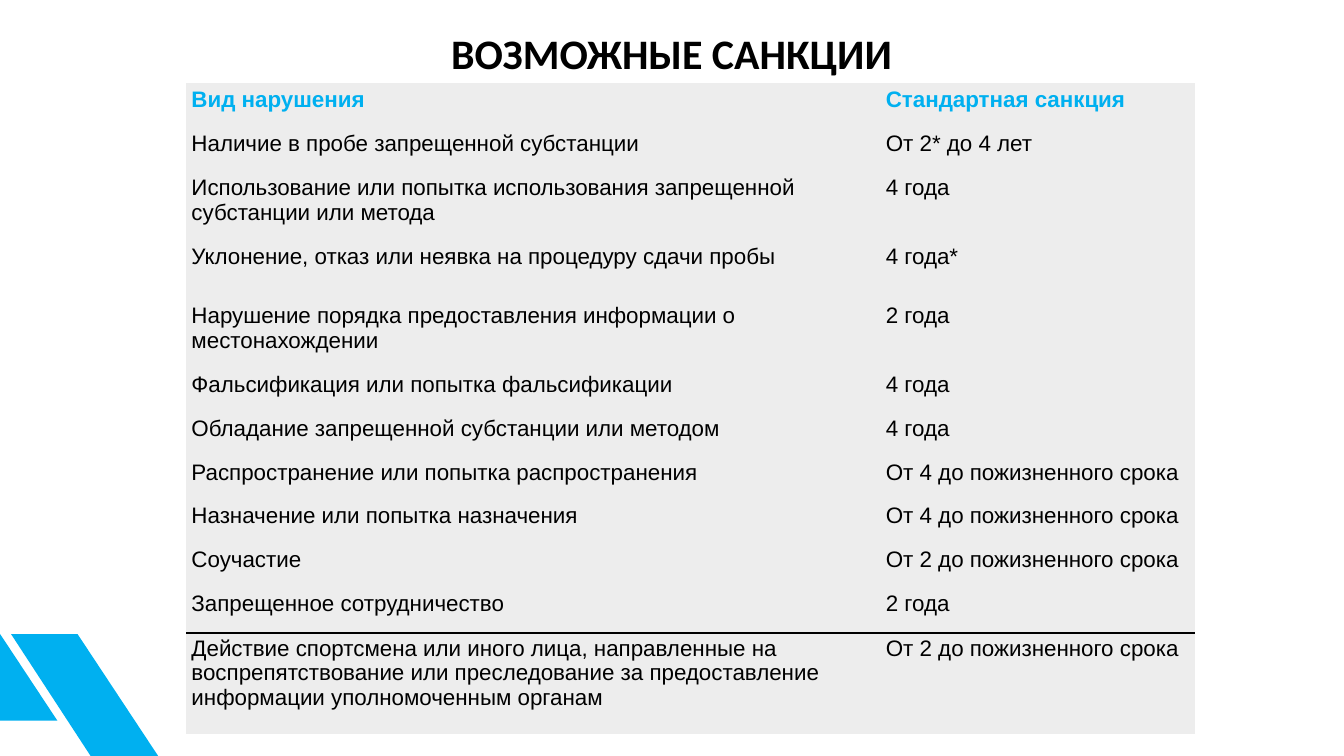
"""Build the slide listing anti-doping violations and their sanctions."""
from dataclasses import dataclass

from lxml.etree import SubElement
from pptx import Presentation
from pptx.dml.color import RGBColor
from pptx.enum.shapes import MSO_CONNECTOR
from pptx.enum.text import PP_ALIGN
from pptx.oxml.ns import qn
from pptx.util import Pt

EMU_PER_PX = 4572


@dataclass(frozen=True)
class Theme:
    accent: RGBColor = RGBColor(0x00, 0xB0, 0xF0)
    ink: RGBColor = RGBColor(0x00, 0x00, 0x00)
    panel: RGBColor = RGBColor(0xED, 0xED, 0xED)
    title_font: str = "Calibri"
    body_font: str = "Arial"
    title_size: int = 30
    body_size: int = 16
    paragraph_gap: int = 14
    rule_width: float = 1.5


THEME = Theme()
INSET = 10
COLUMN_WIDTHS = (1378, 624)
STRIPE_OUTLINE = ((292, 242), (132, 0), (0, 0), (158, 242))
STRIPE_CORNERS = ((22, 1258), (-178, 1188))

SANCTIONS = (
    (87, "Вид нарушения", "Стандартная санкция"),
    (87, "Наличие в пробе запрещенной субстанции", "От 2* до 4 лет"),
    (136, "Использование или попытка использования запрещенной субстанции или метода", "4 года"),
    (119, "Уклонение, отказ или неявка на процедуру сдачи пробы", "4 года*"),
    (136, "Нарушение порядка предоставления информации о местонахождении", "2 года"),
    (87, "Фальсификация или попытка фальсификации", "4 года"),
    (87, "Обладание запрещенной субстанции или методом", "4 года"),
    (87, "Распространение или попытка распространения", "От 4 до пожизненного срока"),
    (87, "Назначение или попытка назначения", "От 4 до пожизненного срока"),
    (87, "Соучастие", "От 2 до пожизненного срока"),
    (292,
     "Запрещенное сотрудничество\n"
     "Действие спортсмена или иного лица, направленные на воспрепятствование "
     "или преследование за предоставление информации уполномоченным органам",
     "2 года\nОт 2 до пожизненного срока"),
)


def px(length):
    return length * EMU_PER_PX


def set_insets(holder):
    holder.margin_left = holder.margin_right = px(INSET)
    holder.margin_top = holder.margin_bottom = px(INSET)


def style_text(frame, font, size, color, bold):
    for paragraph in frame.paragraphs:
        for run in paragraph.runs:
            run.font.name = font
            run.font.size = Pt(size)
            run.font.color.rgb = color
            run.font.bold = bold


def fill_cell(cell, wording, is_header):
    cell.text_frame.text = wording
    set_insets(cell)
    for paragraph in cell.text_frame.paragraphs[1:]:
        paragraph.space_before = Pt(THEME.paragraph_gap)
    color = THEME.accent if is_header else THEME.ink
    style_text(cell.text_frame, THEME.body_font, THEME.body_size, color, is_header)
    properties = cell._tc.get_or_add_tcPr()
    for edge in ("a:lnL", "a:lnR", "a:lnT", "a:lnB"):
        SubElement(SubElement(properties, qn(edge), w="0"), qn("a:noFill"))
    cell.fill.solid()
    cell.fill.fore_color.rgb = THEME.panel


def add_sanctions(slide, left, top):
    heights = [height for height, *_ in SANCTIONS]
    sanctions = slide.shapes.add_table(
        len(SANCTIONS), len(COLUMN_WIDTHS),
        px(left), px(top), px(sum(COLUMN_WIDTHS)), px(sum(heights)),
    ).table
    sanctions.first_row = sanctions.horz_banding = False
    for column, width in zip(sanctions.columns, COLUMN_WIDTHS):
        column.width = px(width)
    for index, (height, *wordings) in enumerate(SANCTIONS):
        sanctions.rows[index].height = px(height)
        for cell, wording in zip(sanctions.rows[index].cells, wordings):
            fill_cell(cell, wording, index == 0)


def add_stripes(slide):
    stripes = slide.shapes.add_group_shape()
    for left, top in STRIPE_CORNERS:
        first, *others = [(left + x, top + y) for x, y in STRIPE_OUTLINE]
        outline = stripes.shapes.build_freeform(*first, scale=EMU_PER_PX)
        outline.add_line_segments(others, close=True)
        stripe = outline.convert_to_shape()
        stripe.shadow.inherit = False
        stripe.fill.solid()
        stripe.fill.fore_color.rgb = THEME.accent
        stripe.line.fill.background()


def add_title(slide, wording, left, top, width, height):
    title = slide.shapes.add_textbox(px(left), px(top), px(width), px(height)).text_frame
    title.word_wrap = True
    set_insets(title)
    title.text = wording
    title.paragraphs[0].alignment = PP_ALIGN.CENTER
    style_text(title, THEME.title_font, THEME.title_size, THEME.ink, True)


def add_rule(slide, left, top, width):
    rule = slide.shapes.add_connector(
        MSO_CONNECTOR.STRAIGHT, px(left), px(top), px(left + width), px(top))
    rule.line.color.rgb = THEME.ink
    rule.line.width = Pt(THEME.rule_width)
    SubElement(rule._element.spPr, qn("a:effectLst"))


def main():
    deck = Presentation()
    deck.slide_width, deck.slide_height = px(2667), px(1500)
    slide = deck.slides.add_slide(deck.slide_layouts[6])
    add_sanctions(slide, 370, 164)
    add_stripes(slide)
    add_title(slide, "ВОЗМОЖНЫЕ САНКЦИИ", 794, 44, 1078, 118)
    add_rule(slide, 370, 1256, sum(COLUMN_WIDTHS))
    deck.save("out.pptx")


if __name__ == "__main__":
    main()
